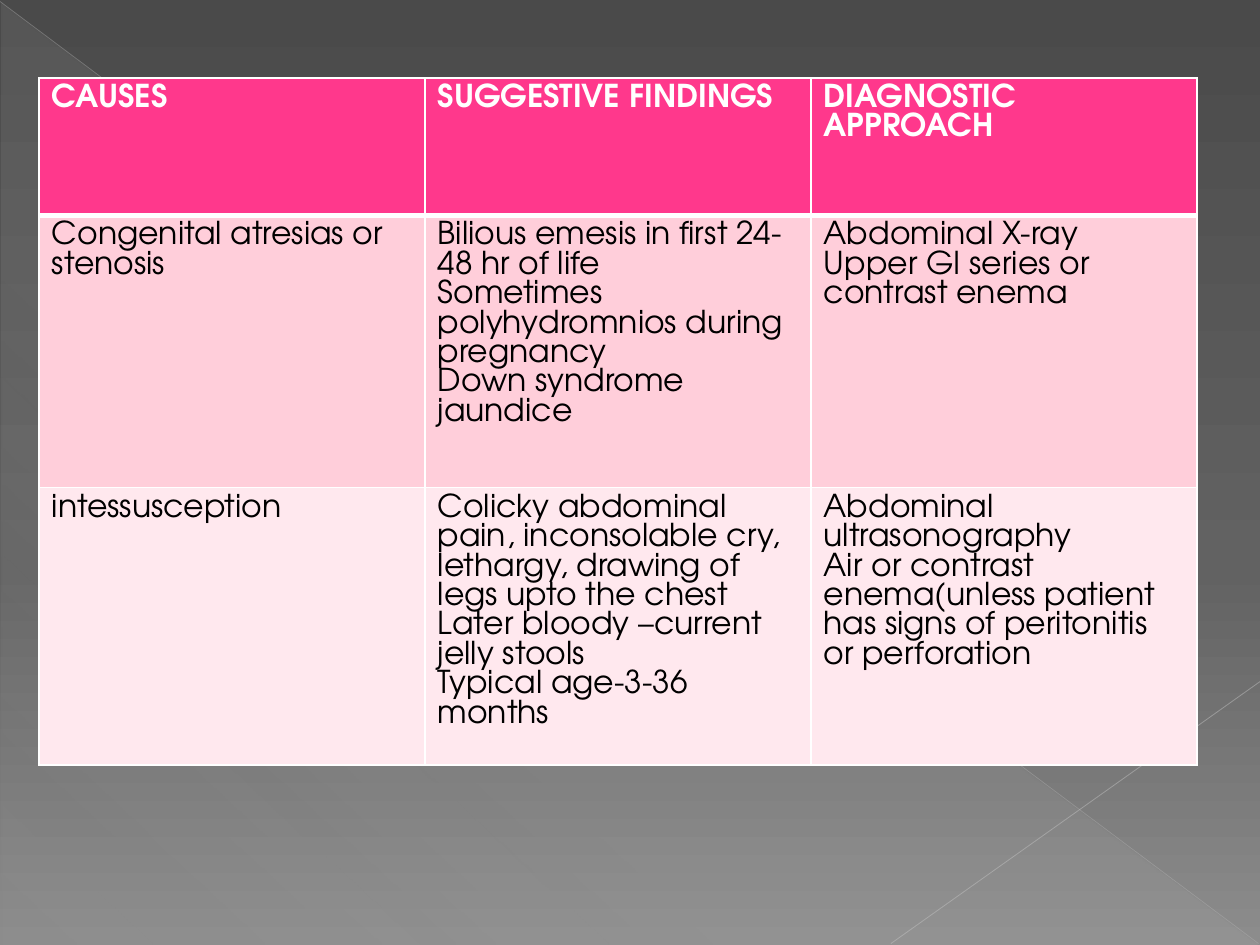
from typing import NamedTuple

from lxml.etree import SubElement
from pptx import Presentation
from pptx.dml.color import RGBColor
from pptx.enum.shapes import MSO_CONNECTOR as Connector, MSO_SHAPE as Shape
from pptx.oxml.ns import qn
from pptx.util import Cm, Pt

COLORS = {
    "bg_top": "4A4A4A", "bg_middle": "626262", "bg_bottom": "8C8C8C",
    "sheen": "D2D2D2", "diagonal": "BFBFBF", "crossing": "C6C6C6",
    "header": "FF388C", "band_dark": "FFCEDA", "band_light": "FFE8EE",
    "white": "FFFFFF", "black": "000000",
}
FONT = "TeX Gyre Adventor"


class Stop(NamedTuple):
    position: int
    color: str
    opacity: int = 100


class Ray(NamedTuple):
    start: tuple[float, float]
    end: tuple[float, float]
    color: str
    width: float
    opacity: int


class Row(NamedTuple):
    height: float
    fill: str
    text_color: str
    bold: bool
    cells: tuple[str, ...]


BACKGROUND = (Stop(0, "bg_top"), Stop(60, "bg_middle"), Stop(100, "bg_bottom"))
SHEEN = (Stop(0, "sheen", 10), Stop(70, "sheen", 8), Stop(100, "sheen", 1))
RAYS = (
    Ray((0, 0.03), (25.37, 19.02), "diagonal", 0.39, 35),
    Ray((25.4, 13.74), (17.96, 19.02), "crossing", 0.47, 45),
)
TABLE_LEFT, TABLE_TOP, COLUMN_WIDTH = 0.79, 1.57, 7.78
ROWS = (
    Row(2.77, "header", "white", True,
        ("CAUSES", "SUGGESTIVE FINDINGS", "DIAGNOSTIC APPROACH")),
    Row(5.49, "band_dark", "black", False, (
        "Congenital atresias or stenosis",
        "Bilious emesis in first 24-48 hr of life\n"
        "Sometimes polyhydromnios during pregnancy\n"
        "Down syndrome\n"
        "jaundice",
        "Abdominal X-ray\n"
        "Upper GI series or contrast enema",
    )),
    Row(5.59, "band_light", "black", False, (
        "intessusception",
        "Colicky abdominal pain, inconsolable cry, lethargy, "
        "drawing of legs upto the chest\n"
        "Later bloody –current jelly stools\n"
        "Typical age-3-36 months",
        "Abdominal ultrasonography\n"
        "Air or contrast enema(unless patient has signs of peritonitis "
        "or perforation",
    )),
)


def rgb(name: str) -> RGBColor:
    return RGBColor.from_string(COLORS[name])


def add_color(parent, name: str, opacity: int = 100) -> None:
    color = SubElement(parent, qn("a:srgbClr"), val=COLORS[name])
    if opacity < 100:
        SubElement(color, qn("a:alpha"), val=str(opacity * 1000))


def set_gradient(fill, owner, stops: tuple[Stop, ...], angle: int) -> None:
    """Fill with any number of stops; the angle runs clockwise in degrees."""
    fill.gradient()
    gradient = next(owner.iter(qn("a:gradFill")))
    for child in list(gradient):
        gradient.remove(child)
    stop_list = SubElement(gradient, qn("a:gsLst"))
    for stop in stops:
        entry = SubElement(stop_list, qn("a:gs"), pos=str(stop.position * 1000))
        add_color(entry, stop.color, stop.opacity)
    SubElement(gradient, qn("a:lin"), ang=str(angle * 60000), scaled="0")


def draw_sheen(slide) -> None:
    sheen = slide.shapes.add_shape(
        Shape.RIGHT_TRIANGLE, Cm(0.03), Cm(0.05), Cm(25.35), Cm(19))
    sheen.shadow.inherit = False
    sheen.line.fill.background()
    set_gradient(sheen.fill, sheen.element, SHEEN, 133)


def draw_ray(slide, ray: Ray) -> None:
    line = slide.shapes.add_connector(
        Connector.STRAIGHT, *(Cm(value) for value in ray.start + ray.end))
    line.line.width = Pt(ray.width)
    line.line.color.rgb = rgb(ray.color)
    color = next(line.element.iter(qn("a:srgbClr")))
    SubElement(color, qn("a:alpha"), val=str(ray.opacity * 1000))
    SubElement(line.element.spPr, qn("a:effectLst"))


def write_text(frame, text: str, *, color: str, bold: bool, size: int = 18) -> None:
    frame.text = text
    for paragraph in frame.paragraphs:
        for run in paragraph.runs:
            run.font.name = FONT
            run.font.size = Pt(size)
            run.font.bold = bold
            run.font.color.rgb = rgb(color)


def set_borders(cell, **widths: int) -> None:
    """Draw white borders; must come before the fill, as the schema orders them."""
    properties = cell._tc.get_or_add_tcPr()
    for side, width in widths.items():
        border = SubElement(properties, qn(f"a:ln{side}"), w=str(Pt(width)))
        add_color(SubElement(border, qn("a:solidFill")), "white")


def draw_table(slide, rows: tuple[Row, ...]) -> None:
    column_count = len(rows[0].cells)
    table = slide.shapes.add_table(
        len(rows), column_count, Cm(TABLE_LEFT), Cm(TABLE_TOP),
        Cm(COLUMN_WIDTH * column_count), Cm(sum(row.height for row in rows)),
    ).table
    for column in table.columns:
        column.width = Cm(COLUMN_WIDTH)
    for index, row in enumerate(rows):
        table.rows[index].height = Cm(row.height)
        for cell, text in zip(table.rows[index].cells, row.cells):
            set_borders(cell, L=1, R=1, T=3 if index == 1 else 1,
                        B=3 if index == 0 else 1)
            cell.fill.solid()
            cell.fill.fore_color.rgb = rgb(row.fill)
            write_text(cell.text_frame, text, color=row.text_color, bold=row.bold)


def main() -> None:
    presentation = Presentation()
    presentation.slide_width, presentation.slide_height = Cm(25.4), Cm(19.05)
    slide = presentation.slides.add_slide(presentation.slide_layouts[6])
    set_gradient(slide.background.fill, slide.element, BACKGROUND, 90)
    draw_sheen(slide)
    for ray in RAYS:
        draw_ray(slide, ray)
    draw_table(slide, ROWS)
    presentation.save("out.pptx")


if __name__ == "__main__":
    main()
